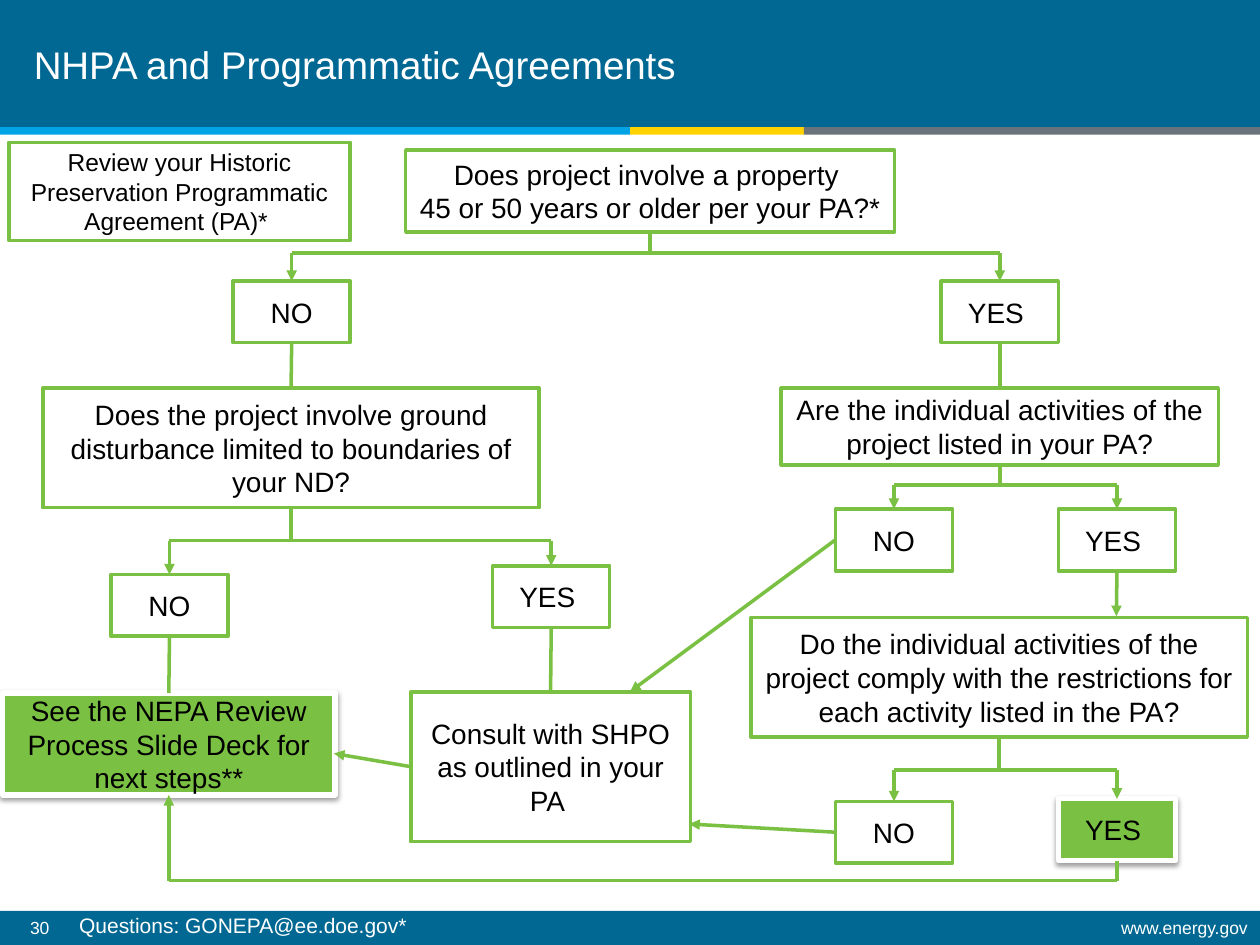
from dataclasses import dataclass
from typing import NamedTuple, Union

from lxml import etree
from pptx import Presentation
from pptx.dml.color import RGBColor
from pptx.enum.shapes import MSO_CONNECTOR, MSO_SHAPE
from pptx.enum.text import MSO_ANCHOR, PP_ALIGN
from pptx.oxml import parse_xml
from pptx.oxml.ns import nsdecls, qn
from pptx.util import Inches, Pt

RECTANGLE = MSO_SHAPE.RECTANGLE
STRAIGHT = MSO_CONNECTOR.STRAIGHT
MIDDLE = MSO_ANCHOR.MIDDLE
LEFT, CENTER, RIGHT = PP_ALIGN.LEFT, PP_ALIGN.CENTER, PP_ALIGN.RIGHT
TOP_SIDE, LEFT_SIDE, BOTTOM_SIDE, RIGHT_SIDE = range(4)


@dataclass(frozen=True)
class Theme:
    font: str = "Arial"
    banner: str = "006892"
    sky: str = "00A4E4"
    yellow: str = "FFD200"
    gray: str = "6A737B"
    green: str = "7AC143"
    white: str = "FFFFFF"
    black: str = "000000"
    title_size: float = 22
    box_size: float = 16
    note_size: float = 14
    contact_size: float = 12
    footer_size: float = 10
    line_width: float = 2
    outcome_line_width: float = 3


THEME = Theme()


class Bar(NamedTuple):
    left: float
    top: float
    width: float
    height: float
    color: str


class Label(NamedTuple):
    text: str
    left: float
    top: float
    width: float
    height: float
    size: float
    align: PP_ALIGN = LEFT
    line_spacing: Union[float, Pt] = 1.0


class Box(NamedTuple):
    text: str
    left: float
    top: float
    width: float = 0.93
    height: float = 0.49
    size: float = THEME.box_size
    outcome: bool = False

    @property
    def center(self) -> float:
        return self.left + self.width / 2


class Joint(NamedTuple):
    box: str
    side: int


class Point(NamedTuple):
    x: float
    y: float


End = Union[Joint, Point]


class Link(NamedTuple):
    start: End
    end: End
    arrow: bool = False


class Fork(NamedTuple):
    parent: str
    bar_y: float
    children: tuple[str, str]


BARS = [
    Bar(0, 0, 10, 1.01, THEME.banner),
    Bar(0, 7.23, 10, 0.27, THEME.banner),
    Bar(0, 1.01, 5, 0.06, THEME.sky),
    Bar(5, 1.01, 1.38, 0.06, THEME.yellow),
    Bar(6.38, 1.01, 3.62, 0.06, THEME.gray),
]
LABELS = [
    Label("30", 0.14, 7.24, 0.39, 0.26, THEME.footer_size, line_spacing=0.9),
    Label("www.energy.gov", 5.99, 7.24, 4.01, 0.26, THEME.footer_size, RIGHT, 0.9),
    Label("NHPA and Programmatic Agreements", 0.17, 0, 7.76, 0.99,
          THEME.title_size, line_spacing=Pt(28)),
    Label("Questions: GONEPA@ee.doe.gov*", 0.53, 6.94, 2.92, 0.81, THEME.contact_size),
]
BOXES = {
    "review": Box("Review your Historic Preservation Programmatic Agreement (PA)* ",
                  0.07, 1.13, 2.71, 0.78, THEME.note_size),
    "age": Box("Does project involve a property \n45 or 50 years or older per your PA?*",
               3.22, 1.19, 3.88, 0.65),
    "age no": Box("NO", 1.85, 2.23),
    "age yes": Box("YES ", 7.47, 2.23),
    "ground": Box("Does the project involve ground disturbance limited to "
                  "boundaries of your ND?", 0.34, 3.08, 3.94, 0.95),
    "ground no": Box("NO", 0.88, 4.56),
    "ground yes": Box("YES ", 3.91, 4.49),
    "listed": Box("Are the individual activities of the project listed in your PA?",
                  6.2, 3.08, 3.47, 0.61),
    "listed no": Box("NO", 6.63, 4.04),
    "listed yes": Box("YES ", 8.4, 4.04),
    "comply": Box("Do the individual activities of the project comply with the "
                  "restrictions for each activity listed in the PA?", 5.96, 4.9, 3.94, 0.95),
    "comply no": Box("NO", 6.63, 6.36),
    "comply yes": Box("YES ", 8.4, 6.34, outcome=True),
    "consult": Box("Consult with SHPO as outlined in your PA ", 3.26, 5.49, 2.22, 1.19),
    "review process": Box("See the NEPA Review Process Slide Deck for next steps**",
                          0.02, 5.5, 2.64, 0.81, outcome=True),
}
FORKS = [
    Fork("age", 2.01, ("age no", "age yes")),
    Fork("ground", 4.29, ("ground no", "ground yes")),
    Fork("listed", 3.85, ("listed no", "listed yes")),
    Fork("comply", 6.11, ("comply no", "comply yes")),
]
RETURN_Y = 6.99
RETURN_START = Point(BOXES["comply yes"].center, RETURN_Y)
RETURN_END = Point(BOXES["review process"].center, RETURN_Y)
LINKS = [
    Link(Joint("age no", BOTTOM_SIDE), Joint("ground", TOP_SIDE)),
    Link(Joint("age yes", BOTTOM_SIDE), Joint("listed", TOP_SIDE)),
    Link(Joint("ground no", BOTTOM_SIDE), Joint("review process", TOP_SIDE)),
    Link(Joint("ground yes", BOTTOM_SIDE), Joint("consult", TOP_SIDE)),
    Link(Joint("listed yes", BOTTOM_SIDE), Point(8.86, 4.89), True),
    Link(Joint("listed no", LEFT_SIDE), Point(5, 5.49), True),
    Link(Joint("comply no", LEFT_SIDE), Point(5.47, 6.54), True),
    Link(Joint("consult", LEFT_SIDE), Point(2.65, 5.98), True),
    Link(Joint("comply yes", BOTTOM_SIDE), RETURN_START),
    Link(RETURN_START, RETURN_END),
    Link(RETURN_END, Joint("review process", BOTTOM_SIDE), True),
]


def rgb(color: str) -> RGBColor:
    return RGBColor.from_string(color)


def write_text(shape, text: str, size: float, color: str, align: PP_ALIGN,
               line_spacing: Union[float, Pt] = 1.0) -> None:
    frame = shape.text_frame
    frame.word_wrap, frame.vertical_anchor = True, MIDDLE
    frame.text = text
    font_format = {"name": THEME.font, "size": Pt(size)}
    for paragraph in frame.paragraphs:
        paragraph.alignment, paragraph.line_spacing = align, line_spacing
        for name, value in font_format.items():
            setattr(paragraph.font, name, value)
        paragraph.font.color.rgb = rgb(color)


def draw_rectangle(slide, area: Union[Bar, Box], fill: str):
    lengths = map(Inches, (area.left, area.top, area.width, area.height))
    shape = slide.shapes.add_shape(RECTANGLE, *lengths)
    shape.shadow.inherit = False
    shape.fill.solid()
    shape.fill.fore_color.rgb = rgb(fill)
    shape.line.fill.background()
    return shape


def draw_label(slide, label: Label) -> None:
    lengths = map(Inches, (label.left, label.top, label.width, label.height))
    shape = slide.shapes.add_textbox(*lengths)
    write_text(shape, label.text, label.size, THEME.white, label.align, label.line_spacing)


def draw_box(slide, box: Box):
    shape = draw_rectangle(slide, box, THEME.green if box.outcome else THEME.white)
    shape.line.color.rgb = rgb(THEME.white if box.outcome else THEME.green)
    shape.line.width = Pt(THEME.outcome_line_width if box.outcome else THEME.line_width)
    if box.outcome:
        effects = shape._element.spPr.find(qn("a:effectLst"))
        effects.append(parse_xml(
            f'<a:outerShdw {nsdecls("a")} blurRad="{Pt(3.1)}" dist="{Pt(1.6)}" dir="5400000">'
            f'<a:srgbClr val="{THEME.black}"><a:alpha val="38000"/></a:srgbClr></a:outerShdw>'))
    write_text(shape, box.text, box.size, THEME.black, CENTER)
    return shape


def draw_link(slide, shapes: dict, link: Link) -> None:
    points = [end if isinstance(end, Point) else Point(0, 0) for end in link[:2]]
    lengths = [Inches(value) for point in points for value in point]
    connector = slide.shapes.add_connector(STRAIGHT, *lengths)
    for end, connect in zip(link[:2], (connector.begin_connect, connector.end_connect)):
        if isinstance(end, Joint):
            connect(shapes[end.box], end.side)
    connector.line.color.rgb = rgb(THEME.green)
    connector.line.width = Pt(THEME.line_width)
    properties = connector._element.spPr
    if link.arrow:
        etree.SubElement(properties.find(qn("a:ln")), qn("a:tailEnd"), type="triangle")
    etree.SubElement(properties, qn("a:effectLst"))


def fork_links(fork: Fork) -> list[Link]:
    stem_end = Point(BOXES[fork.parent].center, fork.bar_y)
    corners = [Point(BOXES[child].center, fork.bar_y) for child in fork.children]
    arrows = [Link(corner, Joint(child, TOP_SIDE), True)
              for corner, child in zip(corners, fork.children)]
    return [Link(Joint(fork.parent, BOTTOM_SIDE), stem_end), Link(*corners), *arrows]


def main() -> None:
    presentation = Presentation()
    presentation.slide_width, presentation.slide_height = Inches(10), Inches(7.5)
    slide = presentation.slides.add_slide(presentation.slide_layouts[6])

    # Banner, footer and their text
    for bar in BARS:
        draw_rectangle(slide, bar, bar.color)
    for label in LABELS:
        draw_label(slide, label)

    # Decision boxes, then the lines that join them
    shapes = {name: draw_box(slide, box) for name, box in BOXES.items()}
    for link in [*LINKS, *(link for fork in FORKS for link in fork_links(fork))]:
        draw_link(slide, shapes, link)

    presentation.save("out.pptx")


if __name__ == "__main__":
    main()
